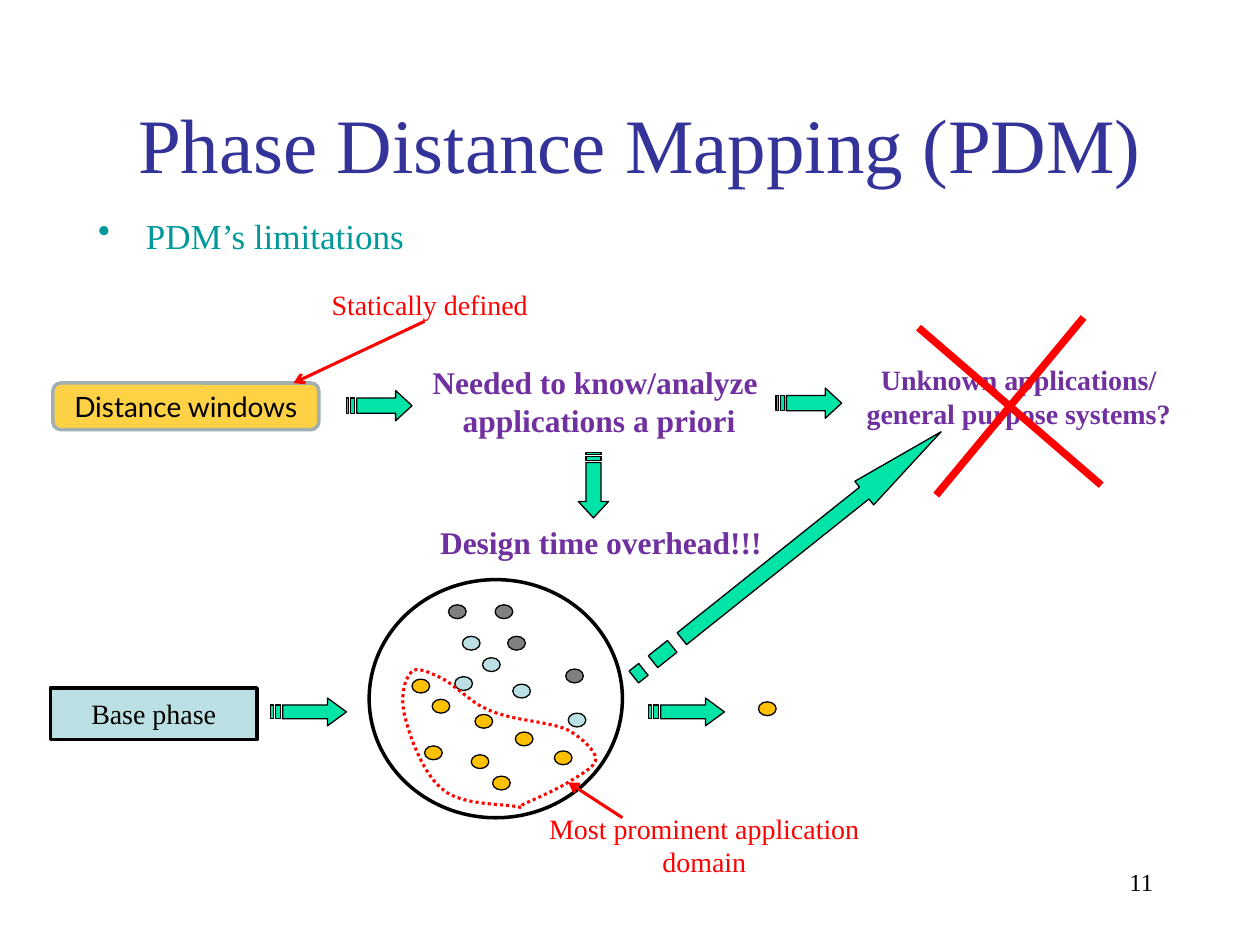
from dataclasses import dataclass
from typing import Optional

import lxml.etree
import pptx
import pptx.dml.color
import pptx.enum.dml
import pptx.enum.shapes
import pptx.enum.text
import pptx.oxml
import pptx.oxml.ns
import pptx.util

SHAPES = pptx.enum.shapes.MSO_SHAPE
ALIGN = pptx.enum.text.PP_ALIGN
ANCHOR = pptx.enum.text.MSO_ANCHOR
qn = pptx.oxml.ns.qn

# Grid of 100 columns by 75 rows on a 10 by 7.5 inch slide
WIDTH, HEIGHT = pptx.util.Inches(10), pptx.util.Inches(7.5)
COLUMN, ROW = WIDTH / 100, HEIGHT / 75
SERIF, SANS = "Times New Roman", "Lato"
BLACK, RED, PURPLE, TEAL, INDIGO = "000000", "FF0000", "7030A0", "009999", "333399"
GREEN, GOLD, PALE, GRAY, SILVER = "00E4A8", "FFC000", "BBE0E3", "808080", "A1AFB1"
DOT_SIZE = (1.4, 1.1)


@dataclass
class Box:
    left: float
    top: float
    width: float
    height: float

    def place(self) -> tuple:
        return (round(self.left * COLUMN), round(self.top * ROW),
                round(self.width * COLUMN), round(self.height * ROW))


@dataclass
class Label:
    box: Box
    lines: tuple
    size: float
    color: str
    bold: bool = False
    align: int = ALIGN.CENTER
    wrap: bool = False


@dataclass
class Arrow:
    box: Box
    rotation: float = 0


@dataclass
class Stroke:
    start: tuple
    end: tuple
    weight: float
    arrowhead: bool = False


def rgb(color: str):
    return pptx.dml.color.RGBColor.from_string(color)


def style(shape, fill: Optional[str], line: str, weight: float) -> None:
    shape.shadow.inherit = False
    if fill:
        shape.fill.solid()
        shape.fill.fore_color.rgb = rgb(fill)
    else:
        shape.fill.background()
    shape.line.color.rgb = rgb(line)
    shape.line.width = pptx.util.Pt(weight)


def write(frame, lines: tuple, size: float, color: str, bold: bool = False,
          align: int = ALIGN.CENTER, font: str = SERIF) -> None:
    for index, text in enumerate(lines):
        paragraph = frame.add_paragraph() if index else frame.paragraphs[0]
        paragraph.alignment = align
        run = paragraph.add_run()
        run.text = text
        run.font.name, run.font.size = font, pptx.util.Pt(size)
        run.font.bold, run.font.color.rgb = bold, rgb(color)


def add_label(slide, label: Label):
    shape = slide.shapes.add_textbox(*label.box.place())
    shape.text_frame.word_wrap = label.wrap
    write(shape.text_frame, label.lines, label.size, label.color, label.bold, label.align)
    return shape


def add_shape(slide, kind, box: Box, fill: Optional[str], line: str = BLACK, weight: float = 0.75):
    shape = slide.shapes.add_shape(kind, *box.place())
    style(shape, fill, line, weight)
    return shape


def add_block(slide, kind, box: Box, text: str, fill: str, line: str, font: str):
    shape = add_shape(slide, kind, box, fill, line, 2)
    shape.text_frame.word_wrap = False
    shape.text_frame.vertical_anchor = ANCHOR.MIDDLE
    write(shape.text_frame, (text,), 16, BLACK, font=font)
    return shape


def add_striped_arrow(slide, arrow: Arrow) -> None:
    """Two stripes and a shaft whose breaks are fixed shares of the length."""
    left, top, width, height = arrow.box.place()
    stripes = [[(a, .25), (a, .75), (b, .75), (b, .25)] for a, b in ((0, 1 / 32), (1 / 16, 1 / 8))]
    body = [(.75, 0), (.75, .25), (5 / 32, .25), (5 / 32, .75), (.75, .75), (.75, 1), (1, .5)]
    outlines = [[(left + x * width, top + y * height) for x, y in part] for part in (body, *stripes)]
    builder = slide.shapes.build_freeform(*outlines[0][0])
    for index, outline in enumerate(outlines):
        if index:
            builder.move_to(*outline[0])
        builder.add_line_segments(outline[1:], close=True)
    shape = builder.convert_to_shape()
    style(shape, GREEN, BLACK, 0.75)
    shape.rotation = arrow.rotation


def add_curve(slide, points: list) -> None:
    """Closed outline: a start point, then three points for each Bezier piece."""
    places = [(x * COLUMN, y * ROW) for x, y in points]
    builder = slide.shapes.build_freeform(*places[0])
    builder.add_line_segments(places[1:], close=True)
    shape = builder.convert_to_shape()
    style(shape, None, RED, 1.75)
    shape.line.dash_style = pptx.enum.dml.MSO_LINE.ROUND_DOT
    outline = next(shape._element.iter(qn("a:path")))
    segments = outline.findall(qn("a:lnTo"))
    for first in range(0, len(places) - 1, 3):
        piece = pptx.oxml.parse_xml(
            f'<a:cubicBezTo {pptx.oxml.ns.nsdecls("a")}/>')
        segments[first].addprevious(piece)
        for segment in segments[first:first + 3]:
            piece.append(segment[0])
            outline.remove(segment)


def add_stroke(slide, stroke: Stroke) -> None:
    ends = [round(value * unit) for point in (stroke.start, stroke.end)
            for value, unit in zip(point, (COLUMN, ROW))]
    line = slide.shapes.add_connector(pptx.enum.shapes.MSO_CONNECTOR.STRAIGHT, *ends)
    line.line.color.rgb = rgb(RED)
    line.line.width = pptx.util.Pt(stroke.weight)
    if stroke.arrowhead:
        lxml.etree.SubElement(line.line._get_or_add_ln(), qn("a:tailEnd"), type="arrow")
    lxml.etree.SubElement(line._element.spPr, qn("a:effectLst"))


LABELS = [
    Label(Box(71.7, 68.3, 20.8, 5), ("11",), 14, BLACK, align=ALIGN.RIGHT, wrap=True),
    Label(Box(25.2, 22.3, 17.8, 3.7), ("Statically defined",), 16, RED),
    Label(Box(33.8, 41, 27.8, 4), ("Design time overhead!!!",), 18, PURPLE, True),
    Label(Box(33.2, 28.3, 28.7, 7.1), ("Needed to know/analyze ", "applications a priori"), 18, PURPLE, True),
    Label(Box(67.6, 28.3, 26.5, 6.4), ("Unknown applications/", "general purpose systems?"), 16, PURPLE, True),
    Label(Box(42.4, 63.9, 27, 6.4), ("Most prominent application", "domain"), 16, RED),
]
ARROWS = [
    Arrow(Box(27.5, 31, 5.2, 2.4)), Arrow(Box(61.6, 30.8, 5.2, 2.4)),
    Arrow(Box(44.5, 37.3, 5.2, 2.4), 90), Arrow(Box(46.9, 42.8, 31.2, 2.4), 321.4),
    Arrow(Box(21.5, 55.4, 6, 2.2)), Arrow(Box(51.5, 55.4, 6, 2.2)),
]
STROKES = [
    Stroke((33.7, 25.5), (23.3, 30.4), 1.75, True),
    Stroke((72.9, 26), (87.4, 38.5), 4.25), Stroke((74.3, 39.3), (86, 25.2), 4.25),
    Stroke((49.4, 64.9), (45.1, 62.1), 1.75, True),
]
# Left and top of each application dot; the last gold one lies outside the circle
DOTS = {
    PALE: [(36.7, 50.5), (38.3, 52.2), (36.1, 53.7), (40.7, 54.3), (45.1, 56.6)],
    GRAY: [(40.3, 50.5), (44.9, 53.1), (35.6, 48), (39.3, 48)],
    GOLD: [(37.7, 56.7), (32.7, 53.9), (34.3, 55.5), (44, 59.6), (33.7, 59.2),
           (37.4, 59.9), (39.1, 61.6), (40.9, 58.1), (60.2, 55.7)],
}
DOMAIN = [
    (40.9, 64), (39.8, 63.8), (36.6, 63.9), (35.2, 62.7), (33.7, 61.6), (32.6, 58.7), (32.2, 57.1),
    (31.7, 55.5), (32.1, 53.9), (32.6, 53.4), (33, 52.8), (34.1, 53.4), (35, 53.8),
    (35.8, 54.2), (37, 55.3), (37.9, 55.9), (38.8, 56.4), (39.3, 56.6), (40.5, 56.9),
    (41.7, 57.2), (43.8, 57.4), (45, 57.9), (46.1, 58.5), (47.2, 59.5), (47.3, 60.2),
    (47.3, 60.9), (46, 61.5), (45.1, 62.1), (44.1, 62.7), (42.3, 63.5), (41.6, 63.8),
    (41, 64.1), (42, 64.2), (40.9, 64),
]


def main() -> None:
    presentation = pptx.Presentation()
    presentation.slide_width, presentation.slide_height = WIDTH, HEIGHT
    slide = presentation.slides.add_slide(presentation.slide_layouts[5])

    # Title and bullet
    title = slide.shapes.title
    title.left, title.top, title.width, title.height = Box(8.3, 5.1, 85, 12.5).place()
    title.text_frame.vertical_anchor = ANCHOR.MIDDLE
    write(title.text_frame, ("Phase Distance Mapping (PDM)",), 44, INDIGO)
    bullet = add_label(slide, Label(Box(6.8, 16.5, 85, 4.5), ("PDM’s limitations",), 20, TEAL,
                                    align=ALIGN.LEFT, wrap=True))
    properties = bullet.text_frame.paragraphs[0]._p.get_or_add_pPr()
    indent = pptx.util.Inches(0.38)
    properties.set("marL", str(indent))
    properties.set("indent", str(-indent))
    lxml.etree.SubElement(properties, qn("a:buChar"), char="•")

    # Blocks at the left
    windows = add_block(slide, SHAPES.ROUNDED_RECTANGLE, Box(4.2, 30.4, 21.1, 3.7),
                        "Distance windows", GOLD, SILVER, SANS)
    fill_color = windows._element.spPr.find(qn("a:solidFill"))[0]
    lxml.etree.SubElement(fill_color, qn("a:alpha"), val="73000")
    add_block(slide, SHAPES.RECTANGLE, Box(4, 54.6, 16.4, 4.1), "Base phase", PALE, BLACK, SERIF)

    # Application space and its prominent domain
    add_shape(slide, SHAPES.OVAL, Box(29.3, 46, 20.1, 18.9), None, weight=2)
    for color, corners in DOTS.items():
        for corner in corners:
            add_shape(slide, SHAPES.OVAL, Box(*corner, *DOT_SIZE), color)
    add_curve(slide, DOMAIN)

    # Labels, arrows and strokes
    for label in LABELS:
        add_label(slide, label)
    for arrow in ARROWS:
        add_striped_arrow(slide, arrow)
    for stroke in STROKES:
        add_stroke(slide, stroke)

    presentation.save("out.pptx")


if __name__ == "__main__":
    main()
